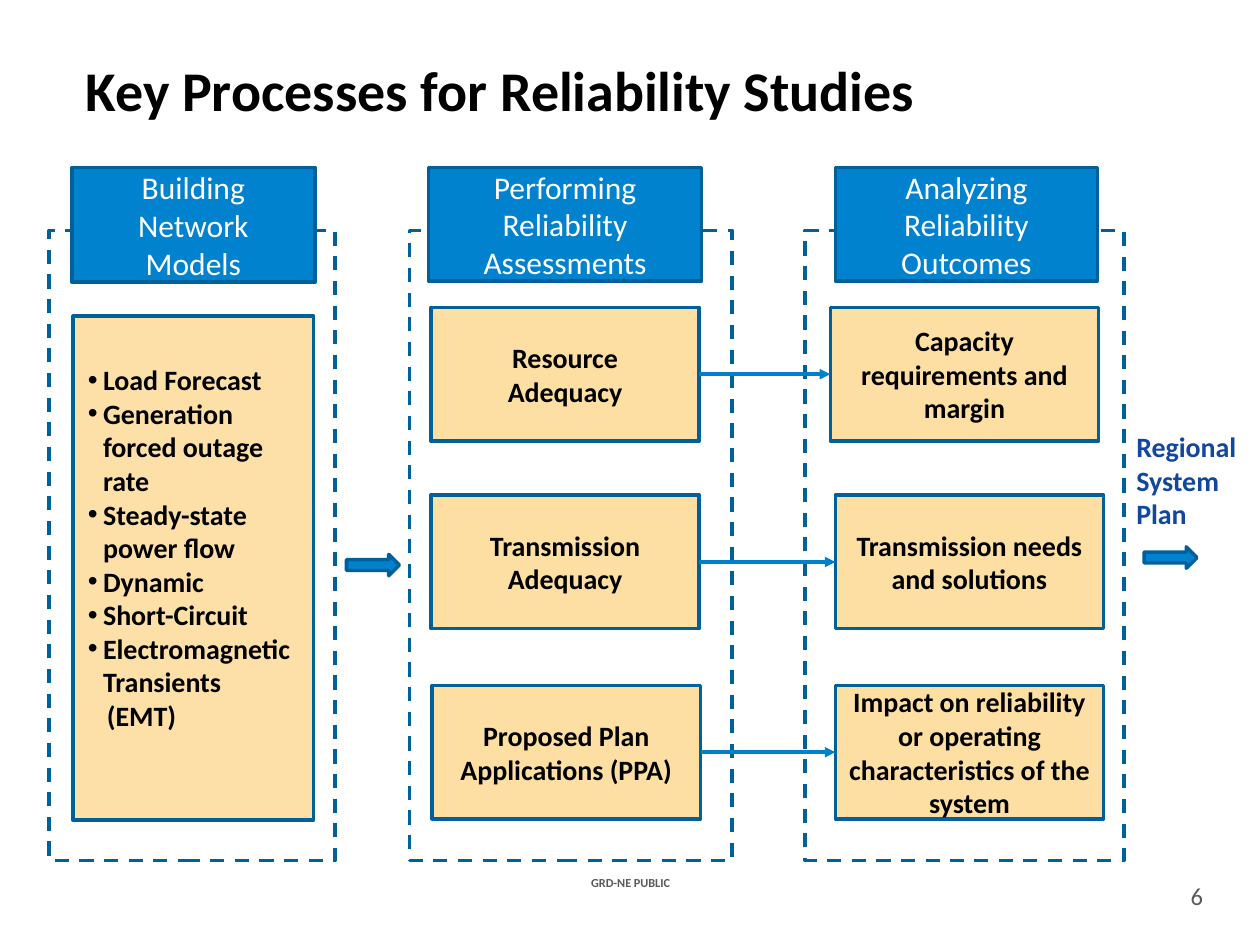
"""Builds the slide on key processes for reliability studies."""
from lxml.etree import SubElement
from pptx import Presentation
from pptx.dml.color import RGBColor
from pptx.enum.dml import MSO_LINE
from pptx.enum.shapes import MSO_CONNECTOR, MSO_SHAPE
from pptx.enum.text import MSO_ANCHOR, PP_ALIGN
from pptx.oxml.ns import qn
from pptx.util import Inches, Pt

BLACK = RGBColor(0x00, 0x00, 0x00)
WHITE = RGBColor(0xFF, 0xFF, 0xFF)
GRAY = RGBColor(0x59, 0x59, 0x59)
SAND = RGBColor(0xFD, 0xDF, 0xA4)
BLUE = RGBColor(0x00, 0x82, 0xCF)
ARROW_BLUE = RGBColor(0x00, 0x7F, 0xCA)
EDGE_BLUE = RGBColor(0x00, 0x60, 0x99)
PLAN_BLUE = RGBColor(0x11, 0x47, 0x9D)

COLUMNS, ROWS = 100, 75
FONT = "Calibri"
EDGE = Pt(2)


class ProcessSlide:
    """Holds the style and the slide, and places elements by grid cell."""

    def __init__(self, deck):
        self.column = deck.slide_width / COLUMNS
        self.row = deck.slide_height / ROWS
        self.slide = deck.slides.add_slide(deck.slide_layouts[5])

    def area(self, left, top, width, height):
        """Turn grid cells into lengths."""
        return (round(left * self.column), round(top * self.row),
                round(width * self.column), round(height * self.row))

    def set_text(self, frame, lines, size, color, bold=False,
                 align=PP_ALIGN.CENTER, anchor=MSO_ANCHOR.MIDDLE, bullets=0):
        """Fill a text frame, one paragraph a line, bulleting the first ones."""
        frame.word_wrap = True
        frame.vertical_anchor = anchor
        frame.text = "\n".join(lines)
        for paragraph in frame.paragraphs[:bullets]:
            properties = paragraph._p.get_or_add_pPr()
            properties.set("marL", str(Inches(0.12)))
            properties.set("indent", str(-Inches(0.12)))
            SubElement(properties, qn("a:buFont"), typeface="Arial")
            SubElement(properties, qn("a:buChar"), char="•")
        for paragraph in frame.paragraphs:
            paragraph.alignment = align
            font = paragraph.font
            font.name, font.size, font.bold = FONT, Pt(size), bold
            font.color.rgb = color

    def title(self, text, *cells):
        """Place and format the title placeholder."""
        heading = self.slide.shapes.title
        heading.left, heading.top, heading.width, heading.height = self.area(*cells)
        self.set_text(heading.text_frame, [text], 32, BLACK, True, PP_ALIGN.LEFT)

    def label(self, lines, cells, size, color, **style):
        """Add a text box and return its frame."""
        frame = self.slide.shapes.add_textbox(*self.area(*cells)).text_frame
        self.set_text(frame, lines, size, color, **style)
        return frame

    def block(self, cells, fill=None, preset=MSO_SHAPE.RECTANGLE):
        """Add an outlined shape, hollow unless a fill is given."""
        block = self.slide.shapes.add_shape(preset, *self.area(*cells))
        block.shadow.inherit = False
        if fill is None:
            block.fill.background()
        else:
            block.fill.solid()
            block.fill.fore_color.rgb = fill
        block.line.color.rgb = EDGE_BLUE
        block.line.width = EDGE
        return block

    def stage(self, left, width):
        """Add the dashed frame of a stage."""
        self.block((left, 18.3, width, 50)).line.dash_style = MSO_LINE.DASH

    def header(self, lines, left, width, height=9):
        """Add the heading of a stage."""
        header = self.block((left, 13.3, width, height), BLUE)
        self.set_text(header.text_frame, lines, 18, WHITE)

    def step(self, lines, left, top):
        """Add one step of a stage."""
        step = self.block((left, top, 21.3, 10.6), SAND)
        self.set_text(step.text_frame, lines, 16, BLACK, True)
        return step

    def panel(self, *cells):
        """Add the slightly transparent panel behind the inputs."""
        panel = self.block(cells, SAND)
        color = panel._element.spPr.find(qn("a:solidFill"))[0]
        SubElement(color, qn("a:alpha"), val="95000")

    def inputs(self, items, ending, cells):
        """Add a bulleted list whose last line continues without a bullet."""
        frame = self.label(items + [ending], cells, 16, BLACK, bold=True,
                           align=PP_ALIGN.LEFT, bullets=len(items))
        frame.margin_bottom = Inches(0.35)
        frame.paragraphs[-1]._p.get_or_add_pPr().set("marL", str(Inches(0.15)))

    def link(self, source, target):
        """Join the right side of a step to the left side of another."""
        link = self.slide.shapes.add_connector(MSO_CONNECTOR.STRAIGHT, 0, 0, 0, 0)
        link.begin_connect(source, 3)
        link.end_connect(target, 1)
        link.line.color.rgb = ARROW_BLUE
        link.line.width = EDGE
        SubElement(link._element.spPr.find(qn("a:ln")), qn("a:tailEnd"), type="triangle")
        SubElement(link._element.spPr, qn("a:effectLst"))


def main():
    """Build and save the deck."""
    deck = Presentation()
    deck.slide_width, deck.slide_height = Inches(10), Inches(7.5)
    page = ProcessSlide(deck)
    page.title("Key Processes for Reliability Studies", 5.8, 0.8, 90, 12.5)

    for left, width in ((3.9, 22.7), (32.5, 25.6), (63.9, 25.3)):
        page.stage(left, width)
    page.header(["Building Network", "Models"], 5.7, 19.3, 9.1)
    page.header(["Performing Reliability Assessments"], 34, 21.7)
    page.header(["Analyzing Reliability Outcomes"], 66.3, 20.8)

    page.panel(5.8, 25.1, 19.1, 40)
    page.inputs(["Load Forecast", "Generation forced outage rate",
                 "Steady-state power flow", "Dynamic", "Short-Circuit",
                 "Electromagnetic Transients"], "(EMT)", (6, 25.7, 19.6, 38.5))

    rows = (
        (24.4, 34.2, ["Resource", "Adequacy"],
         65.9, "Capacity requirements and margin"),
        (39.3, 34.2, ["Transmission Adequacy"],
         66.3, "Transmission needs and solutions"),
        (54.4, 34.3, ["Proposed Plan Applications (PPA)"],
         66.3, "Impact on reliability or operating characteristics of the system"),
    )
    for top, study_left, study, outcome_left, outcome in rows:
        page.link(page.step(study, study_left, top),
                  page.step([outcome], outcome_left, top))

    for left, top in ((27.5, 44), (90.8, 43.4)):
        page.block((left, top, 4.2, 1.7), BLUE, MSO_SHAPE.RIGHT_ARROW)
    page.label(["Regional System", "Plan"], (89.2, 33.6, 14.3, 9.1), 16, PLAN_BLUE,
               bold=True, align=PP_ALIGN.LEFT, anchor=MSO_ANCHOR.TOP)

    page.label(["GRD-NE PUBLIC"], (42.7, 69.2, 14.7, 1.7), 7, GRAY, bold=True)
    number = page.label(["6"], (93.3, 69.6, 3.4, 2.9), 14, GRAY)
    number.margin_left = number.margin_right = 0
    number.margin_top = number.margin_bottom = 0
    deck.save("out.pptx")


if __name__ == "__main__":
    main()
